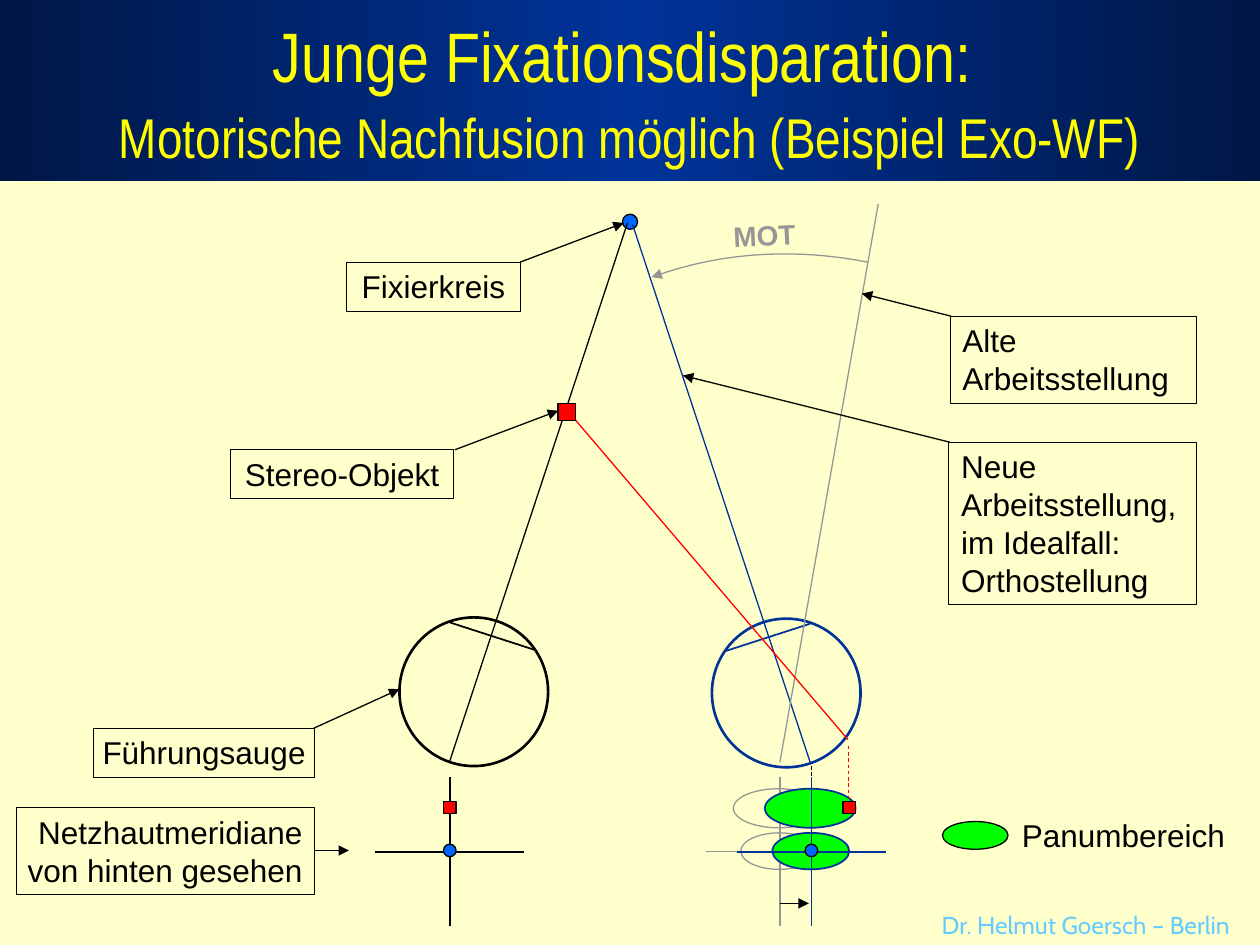
from lxml import etree
from pptx import Presentation
from pptx.dml.color import RGBColor
from pptx.enum.dml import MSO_LINE
from pptx.enum.shapes import MSO_CONNECTOR, MSO_SHAPE
from pptx.enum.text import MSO_ANCHOR, PP_ALIGN
from pptx.oxml.ns import qn
from pptx.util import Inches, Pt

LEFT, CENTER, RIGHT = PP_ALIGN.LEFT, PP_ALIGN.CENTER, PP_ALIGN.RIGHT
TOP, BOTTOM = MSO_ANCHOR.TOP, MSO_ANCHOR.BOTTOM
RECT, OVAL = MSO_SHAPE.RECTANGLE, MSO_SHAPE.OVAL
STRAIGHT, DASH = MSO_CONNECTOR.STRAIGHT, MSO_LINE.DASH

BLACK, NAVY, GREY, RED = "000000", "003399", "969696", "FF0000"
CREAM, BLUE, GREEN, YELLOW = "FFFFCC", "0066FF", "00FF00", "FFFF00"
DARK, SKY = "001746", "66CCFF"
EYE = 1.18
MERIDIAN_Y = 6.76


def rgb(value):
    return RGBColor.from_string(value)


def style_line(line, color, width):
    line.color.rgb = rgb(color)
    line.width = Pt(width)


def add_arrowhead(line_owner):
    ln = line_owner.line._get_or_add_ln()
    etree.SubElement(ln, qn("a:tailEnd"), type="triangle")


def line(s, start, end, color=BLACK, width=0.75, arrow=False, dash=False):
    ends = [Inches(v) for v in (*start, *end)]
    cx = s.shapes.add_connector(STRAIGHT, *ends)
    style_line(cx.line, color, width)
    if dash:
        cx.line.dash_style = DASH
    if arrow:
        add_arrowhead(cx)
    etree.SubElement(cx._element.spPr, qn("a:effectLst"))
    return cx


def shape(s, kind, box, fill=None, color=None, width=0.75):
    sp = s.shapes.add_shape(kind, *[Inches(v) for v in box])
    sp.shadow.inherit = False
    if fill:
        sp.fill.solid()
        sp.fill.fore_color.rgb = rgb(fill)
    else:
        sp.fill.background()
    if color:
        style_line(sp.line, color, width)
    else:
        sp.line.fill.background()
    return sp


def marker(s, kind, x, y, size, fill):
    """Small outlined mark centred on x, y."""
    shape(s, kind, (x - size / 2, y - size / 2, size, size), fill, BLACK)


def write(sp, text, size=18, color=BLACK, font="Arial", bold=False, align=LEFT,
          anchor=TOP, insets=(0, 0, 0, 0), wrap=True, spacing=1.0):
    tf = sp.text_frame
    tf.word_wrap, tf.vertical_anchor = wrap, anchor
    for side, inset in zip(("left", "top", "right", "bottom"), insets):
        setattr(tf, f"margin_{side}", Inches(inset))
    p = tf.paragraphs[0]
    p.text = text
    p.alignment, p.line_spacing = align, spacing
    for r in p.runs:
        for name, value in dict(size=Pt(size), name=font, bold=bold).items():
            setattr(r.font, name, value)
        r.font.color.rgb = rgb(color)


def text_box(s, box, text, **fmt):
    sp = s.shapes.add_textbox(*[Inches(v) for v in box])
    write(sp, text, **fmt)
    return sp


def label(s, box, text, start, end, align=CENTER):
    """Framed label with a pointer from start to end."""
    left = 0.1 if align == LEFT else 0.04
    right = 0.1 if align == RIGHT else 0.04
    sp = shape(s, RECT, box, color=BLACK, width=0.5)
    write(sp, text, align=align, insets=(left, 0.04, right, 0.04))
    line(s, start, end, arrow=True)


def header(s, box):
    left, top, width, height = box
    band = shape(s, RECT, box)
    band.fill.gradient()
    band.fill.gradient_angle = 0
    stops = band.fill._fill._gradFill.gsLst
    for gs in list(stops):
        stops.remove(gs)
    for pos, color in ((0, DARK), (50000, NAVY), (100000, DARK)):
        gs = etree.SubElement(stops, qn("a:gs"), pos=str(pos))
        etree.SubElement(gs, qn("a:srgbClr"), val=color)
    s.shapes._spTree.insert(2, band._element)

    fmt = dict(color=YELLOW, font="Arial Narrow", align=CENTER, spacing=1.1)
    title = s.shapes.title
    title.left, title.top = Inches(left + 0.4), Inches(top + 0.03)
    title.width, title.height = Inches(width - 0.8), Inches(0.73)
    write(title, "Junge Fixationsdisparation: ", size=40, **fmt)
    text_box(s, (left + 0.4, top + height - 0.68, width - 0.8, 0.59),
             "Motorische Nachfusion möglich (Beispiel Exo-WF)",
             size=32, anchor=BOTTOM, **fmt)


def eye(s, left, top, color, mirrored=False):
    shape(s, OVAL, (left, top, EYE, EYE), color=color, width=1.5)
    x1, x2 = [left + (EYE - dx if mirrored else dx) for dx in (0.4, 1.08)]
    line(s, (x1, top + 0.04), (x2, top + 0.26), color, 1)


def meridians(s, x, color, width, panum_fill=None):
    """Retinal cross at x, with its two Panum areas if they have a fill."""
    if panum_fill:
        for dx, top, w, h in ((0.37, 6.26, 0.72, 0.31), (0.31, 6.61, 0.61, 0.29)):
            shape(s, OVAL, (x - dx, top, w, h), panum_fill, color, width)
    half = EYE / 2
    line(s, (x - half, MERIDIAN_Y), (x + half, MERIDIAN_Y), color, width)
    line(s, (x, MERIDIAN_Y - half), (x, MERIDIAN_Y + half), color, width)


def motor_arc(s):
    curve = ((6.88, 2.08), (6.32, 1.97), (5.75, 2.0), (5.23, 2.18))
    steps = 24
    points = []
    for i in range(steps + 1):
        t = i / steps
        weights = ((1 - t) ** 3, 3 * t * (1 - t) ** 2, 3 * t * t * (1 - t), t ** 3)
        points.append(tuple(Inches(sum(w * c[axis] for w, c in zip(weights, curve)))
                            for axis in (0, 1)))
    points.append((Inches(5.17), Inches(2.2)))
    builder = s.shapes.build_freeform(*points[0])
    builder.add_line_segments(points[1:], close=False)
    sp = builder.convert_to_shape()
    sp.shadow.inherit = False
    sp.fill.background()
    style_line(sp.line, GREY, 0.75)
    add_arrowhead(sp)
    text_box(s, (5.82, 1.73, 0.51, 0.27), "MOT", size=16, color=GREY,
             bold=True, wrap=False).rotation = 357.2


def eyes_and_rays(s):
    marker(s, OVAL, 5, 1.76, 0.12, BLUE)
    eye(s, 5.65, 4.91, NAVY, mirrored=True)
    line(s, (6.43, 6.05), (5.02, 1.78), NAVY)
    eye(s, 3.17, 4.9, BLACK)
    line(s, (3.57, 6.04), (4.98, 1.77))
    line(s, (6.19, 6.05), (6.97, 1.62), GREY)
    line(s, (4.53, 3.29), (6.73, 5.87), RED)
    marker(s, RECT, 4.5, 3.27, 0.14, RED)
    motor_arc(s)


def retinas(s):
    old_x, new_x, left_x = 6.19, 6.44, 3.57
    meridians(s, left_x, BLACK, 1)
    meridians(s, old_x, GREY, 0.75, CREAM)
    line(s, (new_x, 6.08), (new_x, 6.75), width=0.5, dash=True)
    meridians(s, new_x, NAVY, 1, GREEN)
    line(s, (old_x, 7.17), (new_x - 0.02, 7.17), width=1, arrow=True)
    for x, square_x in ((left_x, left_x), (new_x, 6.74)):
        marker(s, OVAL, x, 6.75, 0.1, BLUE)
        marker(s, RECT, square_x, 6.41, 0.1, RED)
    line(s, (6.73, 5.92), (6.73, 6.46), RED, 0.5, dash=True)


def labels(s):
    for args in (
        ((7.53, 3.51, 1.97, 1.29),
         "Neue\nArbeitsstellung,\nim Idealfall:\nOrthostellung",
         (7.54, 3.51), (5.42, 2.98), LEFT),
        ((7.54, 2.51, 1.96, 0.69), "Alte\nArbeitsstellung",
         (7.55, 2.51), (6.84, 2.33), LEFT),
        ((2.75, 2.08, 1.38, 0.39), "Fixierkreis", (4.13, 2.08), (4.95, 1.77)),
        ((1.83, 3.57, 1.77, 0.39), "Stereo-Objekt", (3.61, 3.57), (4.43, 3.26)),
        ((0.74, 5.78, 1.76, 0.39), "Führungsauge", (2.49, 5.78), (3.17, 5.47)),
        ((0.13, 6.41, 2.37, 0.69), "Netzhautmeridiane\nvon hinten gesehen",
         (2.5, 6.75), (2.77, 6.75), RIGHT),
    ):
        label(s, *args)


def legend_and_author(s):
    shape(s, OVAL, (7.48, 6.52, 0.52, 0.22), GREEN, BLACK)
    text_box(s, (8.11, 6.48, 1.72, 0.3), "Panumbereich")
    text_box(s, (7.25, 7.17, 2.61, 0.25), "Dr. Helmut Goersch – Berlin",
             size=14, color=SKY, font="Cabin", align=RIGHT, wrap=False,
             insets=(0.1, 0.05, 0.1, 0.05))


def main():
    prs = Presentation()
    prs.slide_width, prs.slide_height = Inches(10), Inches(7.5)
    s = prs.slides.add_slide(prs.slide_layouts[5])
    s.background.fill.solid()
    s.background.fill.fore_color.rgb = rgb(CREAM)
    header(s, (0, 0, 10, 1.44))
    eyes_and_rays(s)
    retinas(s)
    labels(s)
    legend_and_author(s)
    prs.save("out.pptx")


if __name__ == "__main__":
    main()
